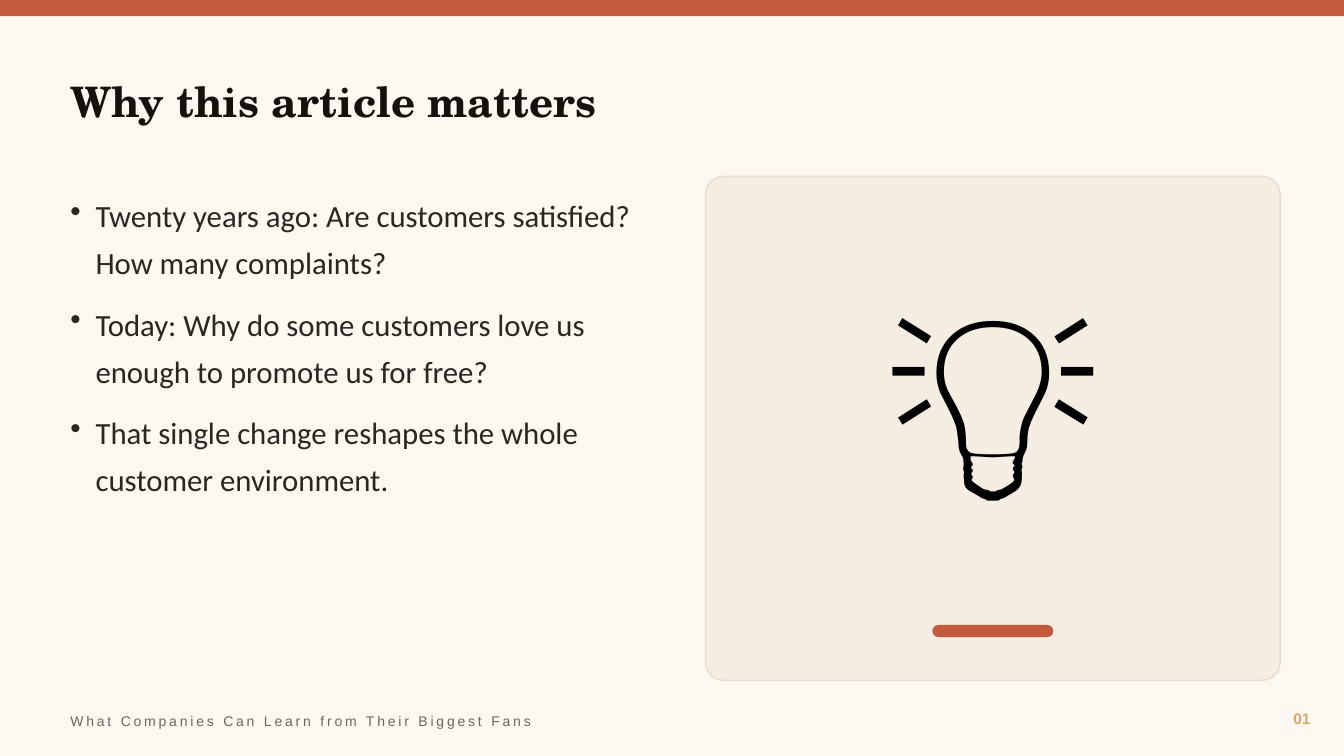
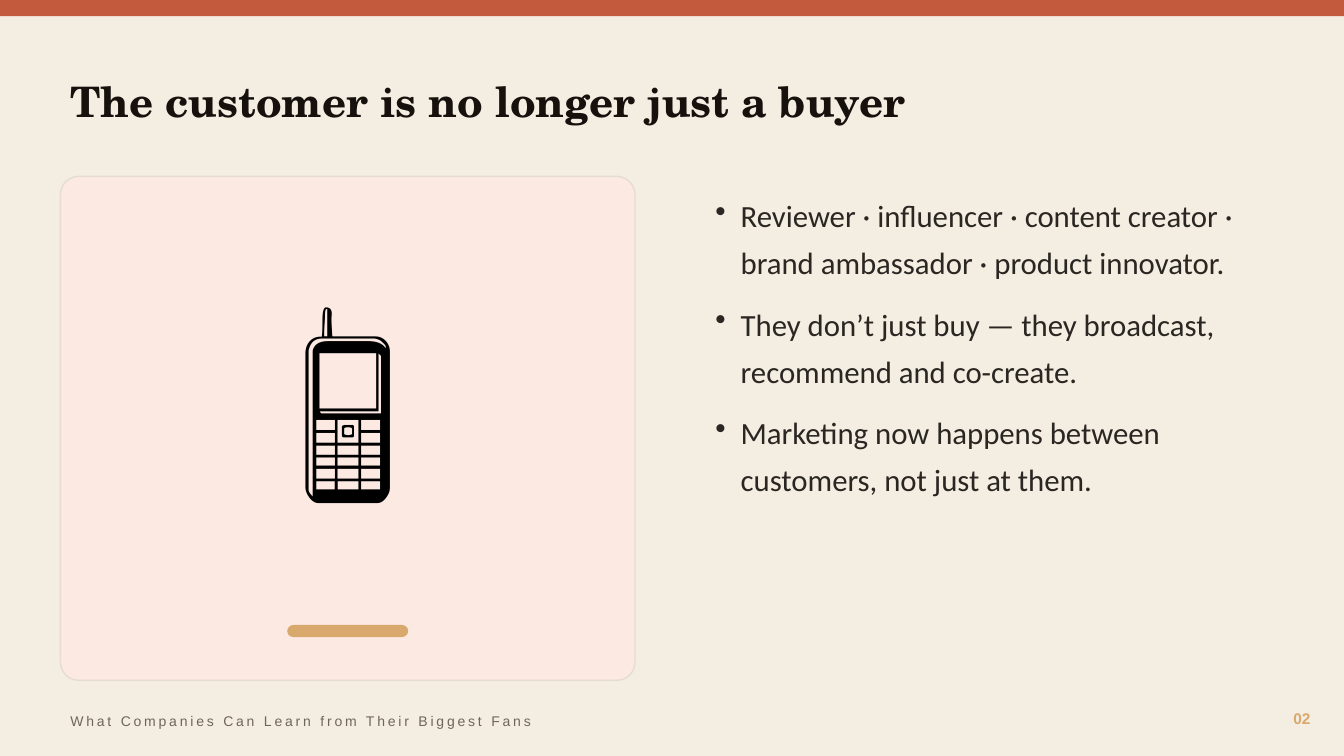
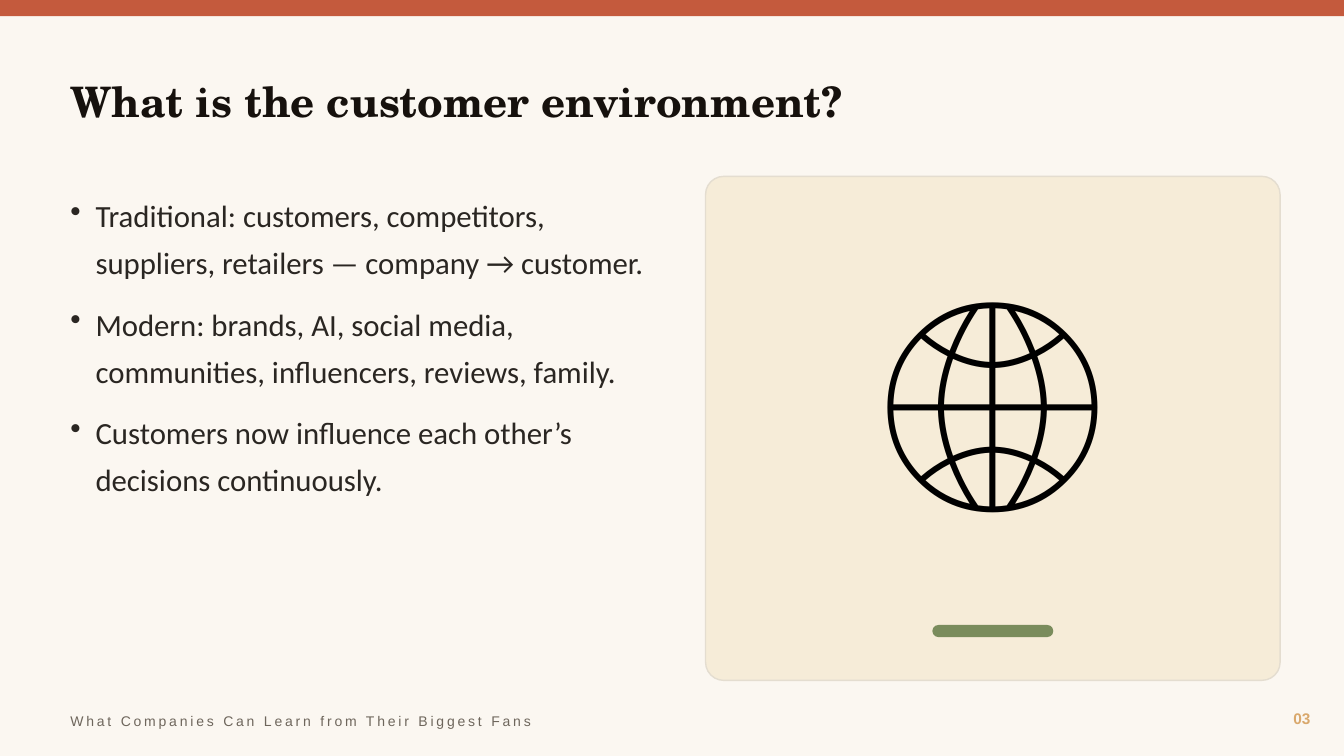
from dataclasses import dataclass

from lxml import etree
from pptx import Presentation
from pptx import util as u
from pptx.dml.color import RGBColor
from pptx.enum import shapes, text
from pptx.oxml.ns import qn


@dataclass(frozen=True)
class Theme:
    paper: str = "FBF7F1"
    sand: str = "F4EDE2"
    blush: str = "FBE9E2"
    wheat: str = "F6ECD8"
    border: str = "E4DDD0"
    rust: str = "C45A3D"
    gold: str = "D9A86C"
    olive: str = "7A8C5C"
    title: str = "16110D"
    body: str = "2A2622"
    muted: str = "6E665C"
    black: str = "000000"
    title_font: str = "TeX Gyre Schola"
    body_font: str = "Calibri"
    footer_font: str = "Arial"
    title_size: int = 30
    body_size: int = 22
    icon_size: int = 150
    number_size: int = 11
    footer_size: int = 10


THEME = Theme()
WIDTH, HEIGHT = 960, 540
LEFT_COLUMN, RIGHT_COLUMN = 43.2, 504
CARD_TOP, CARD_WIDTH, CARD_HEIGHT = 126, 410.4, 360
ACCENT_WIDTH, ACCENT_HEIGHT = 86.4, 8.64
FOOTER = "What Companies Can Learn from Their Biggest Fans"

# Title, bullets, icon, background, card colour, accent colour, card on the left
CONTENT = [
    ("Why this article matters",
     ["Twenty years ago: Are customers satisfied? How many complaints?",
      "Today: Why do some customers love us enough to promote us for free?",
      "That single change reshapes the whole customer environment."],
     "💡", THEME.paper, THEME.sand, THEME.rust, False),
    ("The customer is no longer just a buyer",
     ["Reviewer · influencer · content creator · brand ambassador · product innovator.",
      "They don’t just buy — they broadcast, recommend and co-create.",
      "Marketing now happens between customers, not just at them."],
     "📱", THEME.sand, THEME.blush, THEME.gold, True),
    ("What is the customer environment?",
     ["Traditional: customers, competitors, suppliers, retailers — company → customer.",
      "Modern: brands, AI, social media, communities, influencers, reviews, family.",
      "Customers now influence each other’s decisions continuously."],
     "🌐", THEME.paper, THEME.wheat, THEME.olive, False),
]


def points(*lengths):
    return [u.Pt(length) for length in lengths]


def add_block(slide, box, fill, rounding=None, line=None):
    """Add a filled rectangle, rounded when a rounding ratio is given."""
    preset = shapes.MSO_SHAPE.RECTANGLE if rounding is None else shapes.MSO_SHAPE.ROUNDED_RECTANGLE
    shape = slide.shapes.add_shape(preset, *points(*box))
    shape.shadow.inherit = False
    shape.fill.solid()
    shape.fill.fore_color.rgb = RGBColor.from_string(fill)
    if rounding is not None:
        shape.adjustments[0] = rounding
    if line:
        shape.line.color.rgb = RGBColor.from_string(line)
        shape.line.width = u.Pt(1)
    else:
        shape.line.fill.background()


def add_text_frame(slide, box, anchor):
    frame = slide.shapes.add_textbox(*points(*box)).text_frame
    frame.word_wrap = True
    frame.vertical_anchor = anchor
    return frame


def set_font(paragraph, name, size, color, bold=False):
    font = paragraph.font
    font.name = name
    font.size = u.Pt(size)
    font.bold = bold
    font.color.rgb = RGBColor.from_string(color)


def add_label(slide, box, wording, name, size, color, bold=False,
              align=text.PP_ALIGN.LEFT, tracking=0):
    """Add one vertically centred line; tracking is letter spacing in points."""
    frame = add_text_frame(slide, box, text.MSO_ANCHOR.MIDDLE)
    paragraph = frame.paragraphs[0]
    paragraph.alignment = align
    run = paragraph.add_run()
    run.text = wording
    set_font(paragraph, name, size, color, bold)
    if tracking:
        run.font._element.set("spc", str(tracking * 100))


def add_bullets(slide, box, items):
    frame = add_text_frame(slide, box, text.MSO_ANCHOR.TOP)
    for index, item in enumerate(items):
        paragraph = frame.paragraphs[0] if index == 0 else frame.add_paragraph()
        paragraph.text = item
        paragraph.line_spacing = 1.28
        paragraph.space_after = u.Pt(10)
        properties = paragraph._p.get_or_add_pPr()
        properties.set("marL", str(u.Pt(18)))
        properties.set("indent", str(u.Pt(-18)))
        etree.SubElement(properties, qn("a:buChar")).set("char", "•")
        set_font(paragraph, THEME.body_font, THEME.body_size, THEME.body)


def add_icon_card(slide, left, icon, fill, accent):
    add_block(slide, (left, CARD_TOP, CARD_WIDTH, CARD_HEIGHT), fill, 0.036, THEME.border)
    add_label(slide, (left, CARD_TOP, CARD_WIDTH, 295.2), icon, THEME.body_font,
              THEME.icon_size, THEME.black, align=text.PP_ALIGN.CENTER)
    accent_left = left + (CARD_WIDTH - ACCENT_WIDTH) / 2
    add_block(slide, (accent_left, 446.4, ACCENT_WIDTH, ACCENT_HEIGHT), accent, 0.5)


def add_header(slide, title, background):
    slide.background.fill.solid()
    slide.background.fill.fore_color.rgb = RGBColor.from_string(background)
    add_block(slide, (0, 0, WIDTH, 11.52), THEME.rust)
    add_label(slide, (LEFT_COLUMN, 36, 871.2, 72), title, THEME.title_font,
              THEME.title_size, THEME.title, bold=True)


def add_footer(slide, number):
    add_label(slide, (878.4, 500.4, 64.8, 25.2), f"{number:02d}", THEME.footer_font,
              THEME.number_size, THEME.gold, bold=True, align=text.PP_ALIGN.RIGHT)
    add_label(slide, (LEFT_COLUMN, 504, 576, 21.6), FOOTER, THEME.footer_font,
              THEME.footer_size, THEME.muted, tracking=2)


def main():
    presentation = Presentation()
    presentation.slide_width, presentation.slide_height = points(WIDTH, HEIGHT)
    blank = presentation.slide_layouts[6]
    for number, content in enumerate(CONTENT, start=1):
        title, bullets, icon, background, card, accent, card_on_left = content
        slide = presentation.slides.add_slide(blank)
        add_header(slide, title, background)
        if card_on_left:
            card_left, bullets_left, bullets_width = LEFT_COLUMN, RIGHT_COLUMN, CARD_WIDTH
        else:
            card_left, bullets_left, bullets_width = RIGHT_COLUMN, LEFT_COLUMN, 432
        add_icon_card(slide, card_left, icon, card, accent)
        add_bullets(slide, (bullets_left, 129.6, bullets_width, 360), bullets)
        add_footer(slide, number)
    presentation.save("out.pptx")


if __name__ == "__main__":
    main()
